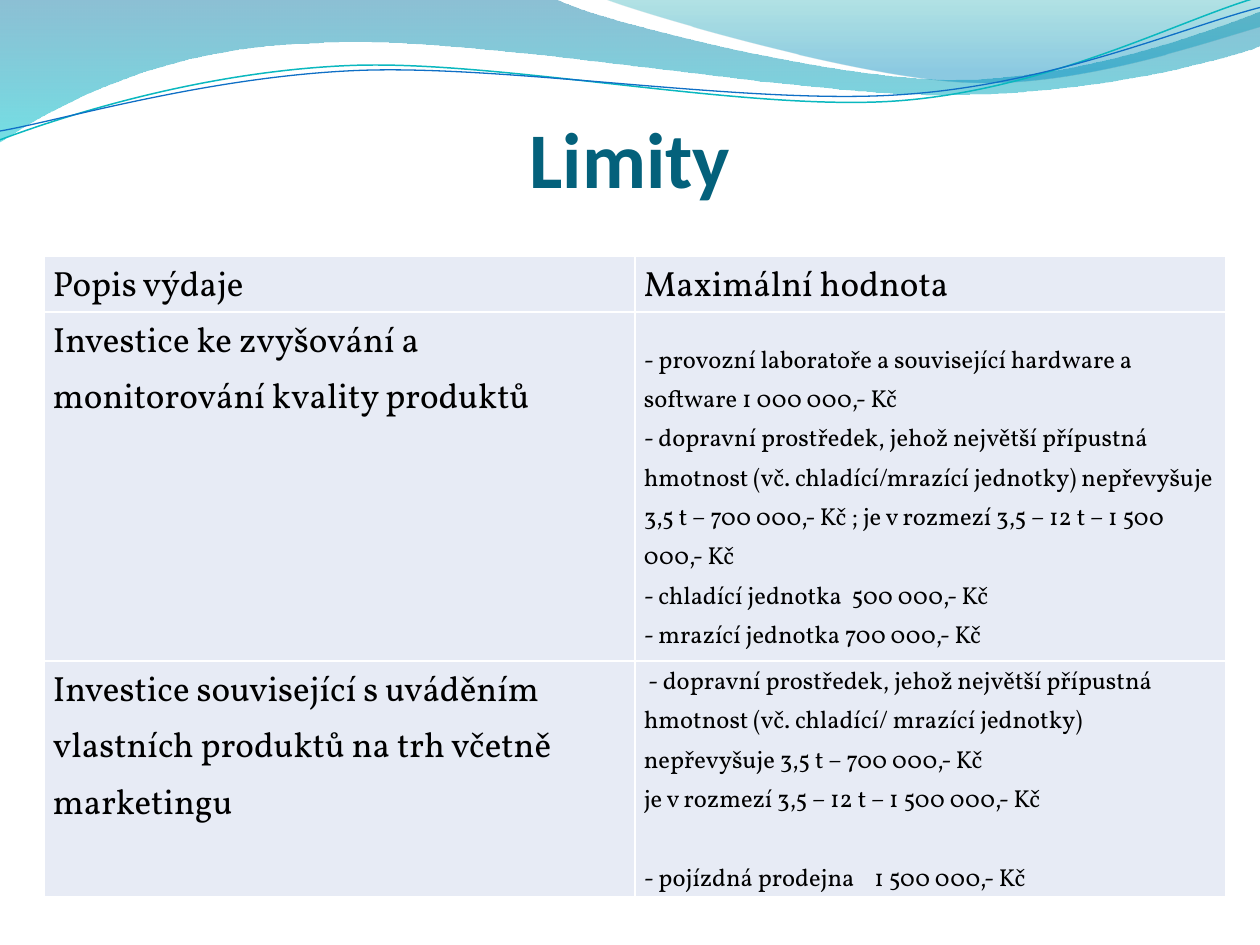
import math

import lxml.etree
import pptx
import pptx.dml.color
import pptx.enum.text
import pptx.oxml.ns
import pptx.util

TEAL = pptx.dml.color.RGBColor(0x04, 0x61, 0x7B)
BLACK = pptx.dml.color.RGBColor(0, 0, 0)
CELL = pptx.dml.color.RGBColor(0xE7, 0xEB, 0xF5)
WHITE = pptx.dml.color.RGBColor(0xFF, 0xFF, 0xFF)
OCEAN = pptx.dml.color.RGBColor(0x00, 0x74, 0xA1)
CYAN = pptx.dml.color.RGBColor(0x00, 0xC6, 0xCF)
LAGOON = pptx.dml.color.RGBColor(0x00, 0xA1, 0xA9)
SKY = pptx.dml.color.RGBColor(0x00, 0x8B, 0xBF)
AQUA = pptx.dml.color.RGBColor(0x0A, 0xB8, 0xBF)
BLUE = pptx.dml.color.RGBColor(0x0F, 0x6F, 0xC6)

GRID_COLUMNS, GRID_ROWS = 10, 7.5
TILT = 357.3

BANDS = [
    ([[(0, 0)], [(4.4, -0.01)],
      [(4.76, 0.17), (6.64, 0.63), (7.58, 0.63)],
      [(8.53, 0.63), (9.58, 0.26), (10, 0.09)], [(10.01, 0.36)],
      [(9.83, 0.44), (8.7, 0.76), (7.46, 0.75)],
      [(6.22, 0.75), (3.82, 0.28), (2.57, 0.34)],
      [(1.29, 0.36), (0.46, 0.83), (-0.01, 1.13)], [(0, 0)]],
     [(0, OCEAN, 45), (1, CYAN, 55)]),
    ([[(4.79, -0.01)],
      [(5.09, 0.11), (6.82, 0.62), (7.69, 0.65)],
      [(8.56, 0.69), (9.61, 0.32), (10, 0.21)], [(10, 0)], [(4.79, -0.01)]],
     [(0, LAGOON, 30), (0.8, SKY, 45)]),
]
STRANDS = [
    ([[(0, 1.11)],
      [(0.48, 0.93), (1.58, 0.57), (2.77, 0.52)],
      [(3.95, 0.47), (5.93, 0.89), (7.13, 0.8)],
      [(8.33, 0.71), (9.38, 0.15), (9.98, -0.02)]], (4.99, 0.57), AQUA, 0.85),
    ([[(0, 1.04)],
      [(0.47, 0.96), (1.64, 0.61), (2.83, 0.56)],
      [(4.03, 0.51), (5.97, 0.84), (7.17, 0.75)],
      [(8.36, 0.67), (9.41, 0.21), (10, 0.06)]], (5, 0.59), BLUE, 0.75),
]

ROW_HEIGHTS = [0.31, 2.77, 1.85]
LIMITS = [
    (["Popis výdaje"], ["Maximální hodnota"]),
    (["Investice ke zvyšování a monitorování kvality produktů"],
     ["- provozní laboratoře a související hardware a software 1 000 000,- Kč",
      "- dopravní prostředek, jehož největší přípustná hmotnost "
      "(vč. chladící/mrazící jednotky) nepřevyšuje 3,5 t – 700 000,- Kč ; "
      "je v rozmezí 3,5 – 12 t – 1 500 000,- Kč",
      "- chladící jednotka\t500 000,- Kč",
      "- mrazící jednotka 700 000,- Kč"]),
    (["Investice související s uváděním vlastních produktů na trh včetně marketingu"],
     [" - dopravní prostředek, jehož největší přípustná hmotnost "
      "(vč. chladící/ mrazící jednotky)",
      "nepřevyšuje 3,5 t – 700 000,- Kč",
      "je v rozmezí 3,5 – 12 t – 1 500 000,- Kč",
      "- pojízdná prodejna\t1 500 000,- Kč"]),
]
TAB_STOPS = {LIMITS[1][1][2]: 1.65, LIMITS[2][1][3]: 1.83}
GAPS_BEFORE = {LIMITS[2][1][3]: 22.5}


def add_xml(parent, tag, **attributes):
    """Append a DrawingML child and return it."""
    return lxml.etree.SubElement(parent, pptx.oxml.ns.qn(tag), attributes)


def level(segments, pivot):
    """Turn the segments about the pivot to undo the tilt."""
    sine, cosine = math.sin(math.radians(-TILT)), math.cos(math.radians(-TILT))
    px, py = pivot
    return [[(px + (x - px) * cosine - (y - py) * sine,
              py + (x - px) * sine + (y - py) * cosine) for x, y in segment]
            for segment in segments]


def draw_outline(slide, box, segments, closed):
    """Draw straight and cubic segments given in grid units inside the box."""
    left, top, width, height = box
    points = [(round(left + x / GRID_COLUMNS * width), round(top + y / GRID_ROWS * height))
              for segment in segments for x, y in segment]
    builder = slide.shapes.build_freeform(*points[0])
    builder.add_line_segments(points[1:], close=closed)
    outline = builder.convert_to_shape()
    outline.shadow.inherit = False
    steps = iter(list(outline._element.iter(pptx.oxml.ns.qn("a:lnTo"))))
    for segment in segments[1:]:
        group = [next(steps) for _ in segment]
        if len(group) == 3:
            curve = group[0].makeelement(pptx.oxml.ns.qn("a:cubicBezTo"))
            group[0].addprevious(curve)
            for step in group:
                curve.append(step[0])
                step.getparent().remove(step)
    return outline


def draw_waves(slide, box):
    """Draw the translucent bands and the thin strands over them."""
    for segments, stops in BANDS:
        band = draw_outline(slide, box, segments, True)
        band.line.fill.background()
        band.fill.gradient()
        band.fill.gradient_angle = 270
        for stop, (position, color, _) in zip(band.fill.gradient_stops, stops):
            stop.position = position
            stop.color.rgb = color
        colors = band._element.spPr.iter(pptx.oxml.ns.qn("a:srgbClr"))
        for color, (_, _, opacity) in zip(colors, stops):
            add_xml(color, "a:alpha", val=str(opacity * 1000))
    for segments, pivot, color, weight in STRANDS:
        strand = draw_outline(slide, box, level(segments, pivot), False)
        strand.rotation = TILT
        strand.fill.background()
        strand.line.color.rgb = color
        strand.line.width = pptx.util.Pt(weight)


def add_run(paragraph, text, font, size, color, bold=False):
    """Add one formatted run."""
    run = paragraph.add_run()
    run.text = text
    run.font.name = font
    run.font.size = pptx.util.Pt(size)
    run.font.color.rgb = color
    run.font.bold = bold


def place_title(slide, box):
    """Place the heading in front of the waves."""
    heading = slide.shapes.title
    slide.shapes._spTree.append(heading._element)
    heading.left, heading.top, heading.width, heading.height = box
    frame = heading.text_frame
    frame.margin_left = frame.margin_right = frame.margin_bottom = 0
    frame.margin_top = pptx.util.Inches(0.05)
    frame.vertical_anchor = pptx.enum.text.MSO_ANCHOR.BOTTOM
    frame.paragraphs[0].alignment = pptx.enum.text.PP_ALIGN.CENTER
    add_run(frame.paragraphs[0], "Limity", "Calibri", 45, TEAL, True)


def fill_cell(cell, lines, size):
    """Write the lines of one cell with its white borders and fill."""
    cell.margin_left = cell.margin_right = pptx.util.Inches(0.07)
    cell.margin_top = cell.margin_bottom = 0
    properties = cell._tc.get_or_add_tcPr()
    for side in ("a:lnL", "a:lnR", "a:lnT", "a:lnB"):
        border = add_xml(properties, side, w=str(pptx.util.Pt(1)))
        add_xml(add_xml(border, "a:solidFill"), "a:srgbClr", val=str(WHITE))
    cell.fill.solid()
    cell.fill.fore_color.rgb = CELL
    frame = cell.text_frame
    for index, line in enumerate(lines):
        paragraph = frame.add_paragraph() if index else frame.paragraphs[0]
        paragraph.line_spacing = 1.15
        if line in GAPS_BEFORE:
            paragraph.space_before = pptx.util.Pt(GAPS_BEFORE[line])
        if line in TAB_STOPS:
            tabs = add_xml(paragraph._p.get_or_add_pPr(), "a:tabLst")
            add_xml(tabs, "a:tab", pos=str(pptx.util.Inches(TAB_STOPS[line])), algn="l")
        add_run(paragraph, line, "Vollkorn", size, BLACK)


def place_limits(slide, box):
    """Place the table of expenses and their maximum values."""
    limits = slide.shapes.add_table(len(LIMITS), 2, *box).table
    limits.first_row = limits.horz_banding = False
    for row, height in zip(limits.rows, ROW_HEIGHTS):
        row.height = pptx.util.Inches(height)
    for row, (expense, maximum) in enumerate(LIMITS):
        fill_cell(limits.cell(row, 0), expense, 20)
        fill_cell(limits.cell(row, 1), maximum, 14 if row else 20)
    limits.cell(1, 1).margin_top = pptx.util.Inches(0.22)


def main():
    """Build and save the slide."""
    deck = pptx.Presentation()
    deck.slide_width = pptx.util.Inches(GRID_COLUMNS)
    deck.slide_height = pptx.util.Inches(GRID_ROWS)
    slide = deck.slides.add_slide(deck.slide_layouts[5])
    draw_waves(slide, (0, 0, deck.slide_width, deck.slide_height))
    place_title(slide, [pptx.util.Inches(n) for n in (0.5, 0.77, 9, 0.85)])
    place_limits(slide, [pptx.util.Inches(n) for n in (0.35, 2.03, 9.38, 4.98)])
    deck.save("out.pptx")


if __name__ == "__main__":
    main()
